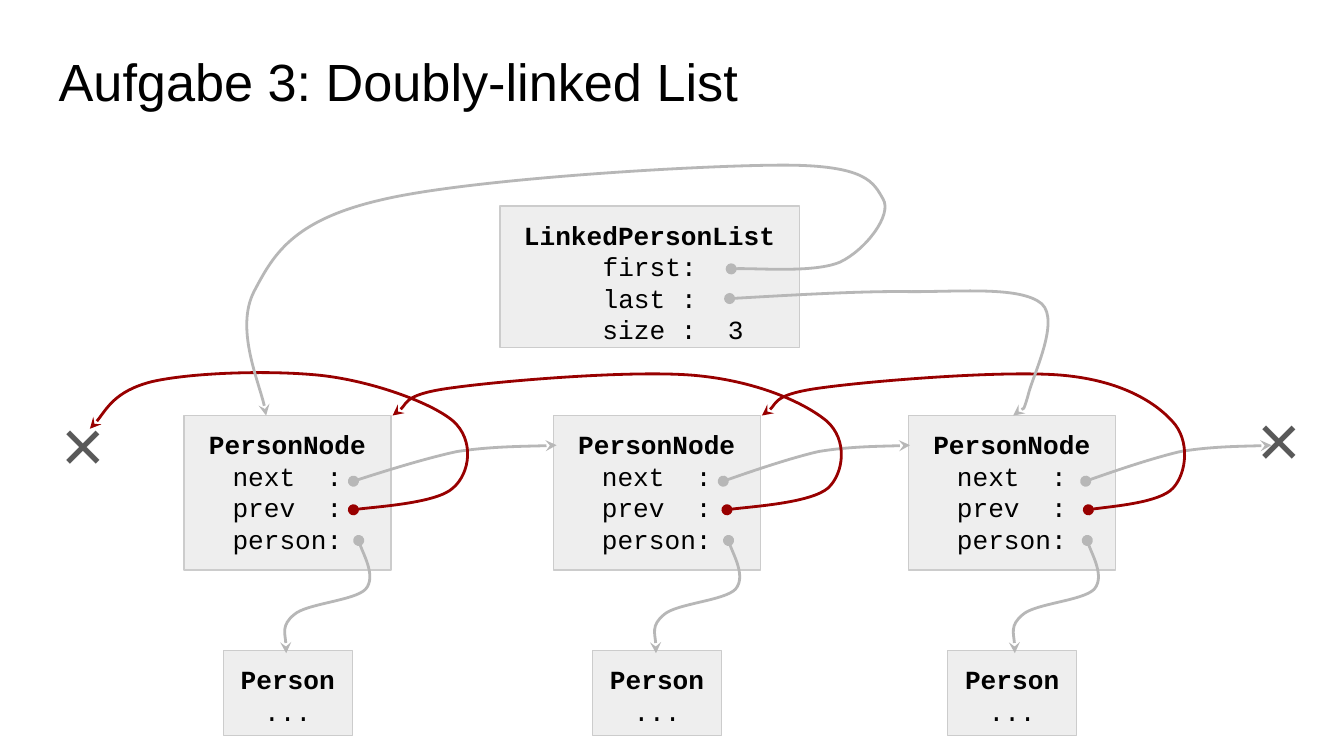
import lxml.etree
import pptx
import pptx.dml.color
import pptx.enum.shapes
import pptx.enum.text
import pptx.oxml.ns
import pptx.util

Cm = pptx.util.Cm
Pt = pptx.util.Pt
qn = pptx.oxml.ns.qn
RGB = pptx.dml.color.RGBColor.from_string

COLORS = {"box": "EEEEEE", "border": "CCCCCC", "text": "000000",
          "cross": "595959", "forward": "B7B7B7", "back": "980000"}

deck = pptx.Presentation()
deck.slide_width, deck.slide_height = Cm(25.4), Cm(14.28)
slide = deck.slides.add_slide(deck.slide_layouts[6])


def add_box(left, top, width, height, lines):
    """Grey record: a bold type name above its centred fields."""
    box = slide.shapes.add_shape(pptx.enum.shapes.MSO_SHAPE.RECTANGLE,
                                 Cm(left), Cm(top), Cm(width), Cm(height))
    box.shadow.inherit = False
    box.fill.solid()
    box.fill.fore_color.rgb = RGB(COLORS["box"])
    box.line.color.rgb = RGB(COLORS["border"])
    box.line.width = Pt(0.75)
    frame = box.text_frame
    frame.margin_left = frame.margin_right = Cm(0.25)
    frame.margin_top = frame.margin_bottom = Cm(0.25)
    frame.vertical_anchor = pptx.enum.text.MSO_ANCHOR.TOP
    frame.text = "\n".join(lines)
    for row, paragraph in enumerate(frame.paragraphs):
        paragraph.alignment = pptx.enum.text.PP_ALIGN.CENTER
        font = paragraph.runs[0].font
        font.name, font.size, font.bold = "Courier New", Pt(14), row == 0
        font.color.rgb = RGB(COLORS["text"])


def add_curve(xs, ys, color):
    """Bézier arrow: a start point, then three points for each segment."""
    points = [(Cm(x), Cm(y)) for x, y in zip(xs, ys)]
    builder = slide.shapes.build_freeform(*points[0])
    builder.add_line_segments(points[1:], close=False)
    curve = builder.convert_to_shape()
    curve.shadow.inherit = False
    curve.fill.background()
    curve.line.color.rgb = RGB(color)
    curve.line.width = Pt(1.5)
    # Merge every three straight steps into one cubic segment
    steps = list(curve.element.iter(qn("a:lnTo")))
    outline = steps[0].getparent()
    for i in range(0, len(steps), 3):
        cubic = lxml.etree.SubElement(outline, qn("a:cubicBezTo"))
        for step in steps[i:i + 3]:
            cubic.append(step[0])
            outline.remove(step)
    line = curve.element.find(".//" + qn("a:ln"))
    lxml.etree.SubElement(line, qn("a:headEnd"), type="oval")
    lxml.etree.SubElement(line, qn("a:tailEnd"), type="stealth")


# Title and the two null marks
for text, left, top, width, height, size, color in (
        ("Aufgabe 3: Doubly-linked List", 0.86, 0.81, 23.67, 1.6, 28, "text"),
        ("×", 0.91, 7.39, 1.19, 1.35, 40, "cross"),
        ("×", 23.52, 7.29, 1.19, 1.35, 40, "cross")):
    label = slide.shapes.add_textbox(Cm(left), Cm(top), Cm(width), Cm(height))
    label.text_frame.word_wrap = True
    label.text_frame.text = text
    label_font = label.text_frame.paragraphs[0].runs[0].font
    label_font.name, label_font.size = "Arial", Pt(size)
    label_font.color.rgb = RGB(COLORS[color])

# List head, nodes and persons
add_box(9.45, 3.89, 5.66, 2.67,
        ["LinkedPersonList", "first:", "last :", "   size :  3"])
for node_left in (3.48, 10.46, 17.17):
    add_box(node_left, 7.85, 3.91, 2.92,
            ["PersonNode", "next  :", "prev  :", "person:"])
    add_box(node_left + 0.74, 12.29, 2.44, 1.6, ["Person", "..."])

# person: from each node down to its person
person_dx = [0, 0.03, 0.33, 0.13, -0.08, -0.99, -1.22, -1.47, -1.35, -1.37]
person_y = [10.21, 10.36, 10.9, 11.13, 11.35, 11.4, 11.61, 11.81, 12.22, 12.34]
for start in (6.78, 13.77, 20.55):
    add_curve([start + dx for dx in person_dx], person_y, COLORS["forward"])

# next: from each node to the one on its right
next_share = [0, 0.08, 0.35, 0.51, 0.68, 0.92, 1]
next_y = [9.09, 8.99, 8.66, 8.53, 8.43, 8.43, 8.41]
for start, end in ((6.68, 10.52), (13.67, 17.2), (20.52, 24.03)):
    add_curve([start + share * (end - start) for share in next_share],
              next_y, COLORS["forward"])

# prev: from each node back to the one on its left
rise_y = [9.63, 9.58, 9.5, 9.22, 8.94, 8.31, 7.95, 7.59, 7.19, 7.09]
node_fall_y = [6.99, 7.19, 7.32, 7.44, 7.77, 7.85]
null_fall_y = [6.99, 7.04, 7.21, 7.39, 7.95, 8.1]
for prev_x, fall_y in (
        ([6.68, 6.99, 8.26, 8.56, 8.89, 8.97, 8.56, 8.13,
          6.99, 6.05, 5.08, 3.61, 2.87, 2.16, 1.88, 1.7], null_fall_y),
        ([13.74, 14.05, 15.32, 15.65, 15.95, 16.03, 15.62, 15.18,
          14.27, 13.11, 11.94, 9.55, 8.59, 7.65, 7.62, 7.42], node_fall_y),
        ([20.57, 20.83, 21.92, 22.17, 22.43, 22.5, 22.15, 21.82,
          21.18, 20.09, 19, 16.54, 15.57, 14.63, 14.61, 14.4], node_fall_y)):
    add_curve(prev_x, rise_y + fall_y, COLORS["back"])

# first and last: from the list head to the outer nodes
add_curve([13.82, 14.17, 15.39, 15.88, 16.36, 16.87, 16.69, 16.51, 16.38, 14.81,
           13.23, 8.84, 7.19, 5.51, 5.16, 4.8, 4.45, 5, 5.03],
          [5.08, 5.05, 5.16, 4.95, 4.72, 4.06, 3.76, 3.45, 3.12, 3.12,
           3.12, 3.38, 3.78, 4.17, 4.83, 5.51, 6.2, 7.47, 7.85],
          COLORS["forward"])
add_curve([13.79, 14.38, 16.26, 17.22, 18.21, 19.3, 19.69,
           20.04, 19.51, 19.43, 19.33, 19.2, 19.15],
          [5.64, 5.61, 5.49, 5.51, 5.51, 5.41, 5.74,
           6.07, 7.11, 7.47, 7.82, 7.8, 7.85],
          COLORS["forward"])

deck.save("out.pptx")
